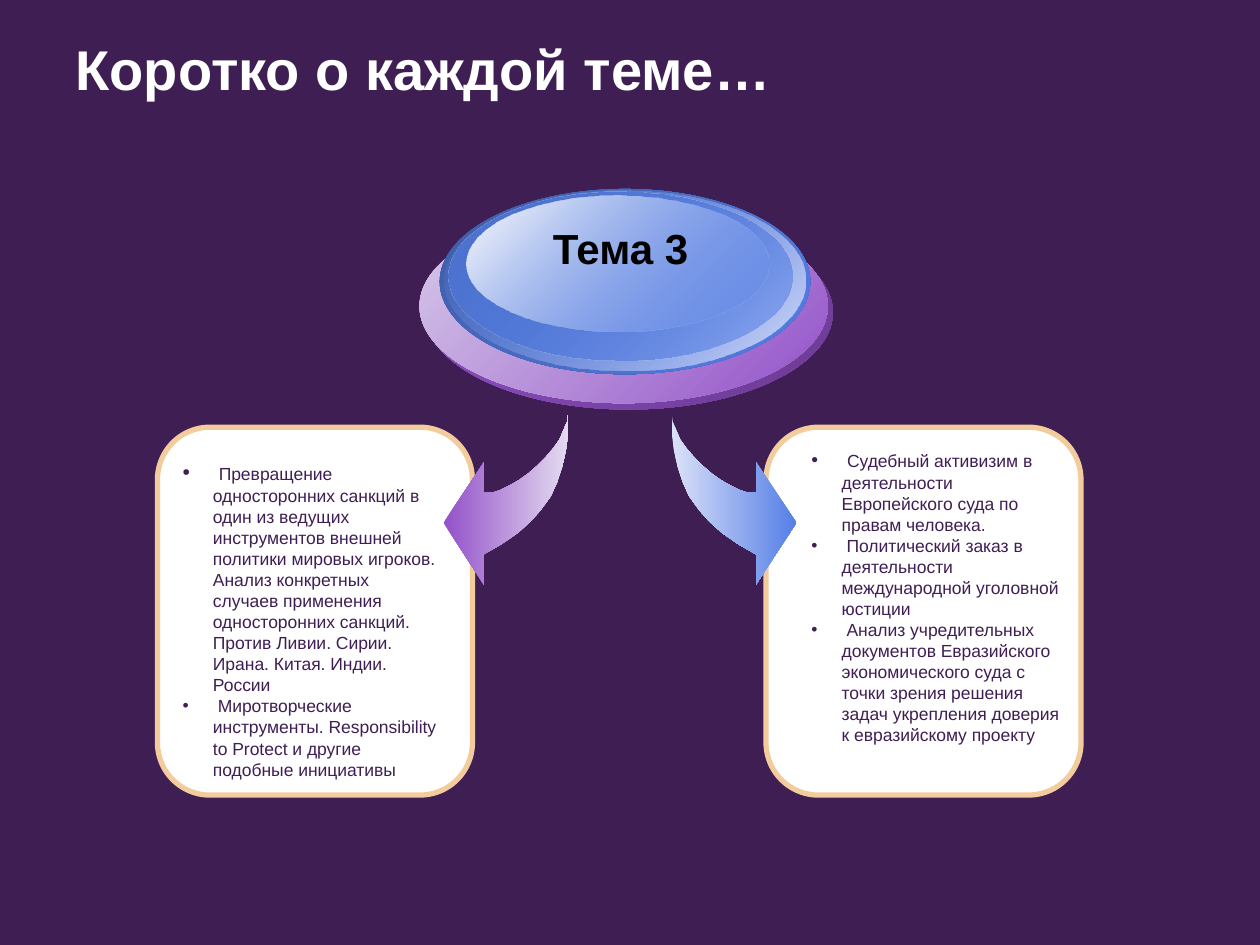
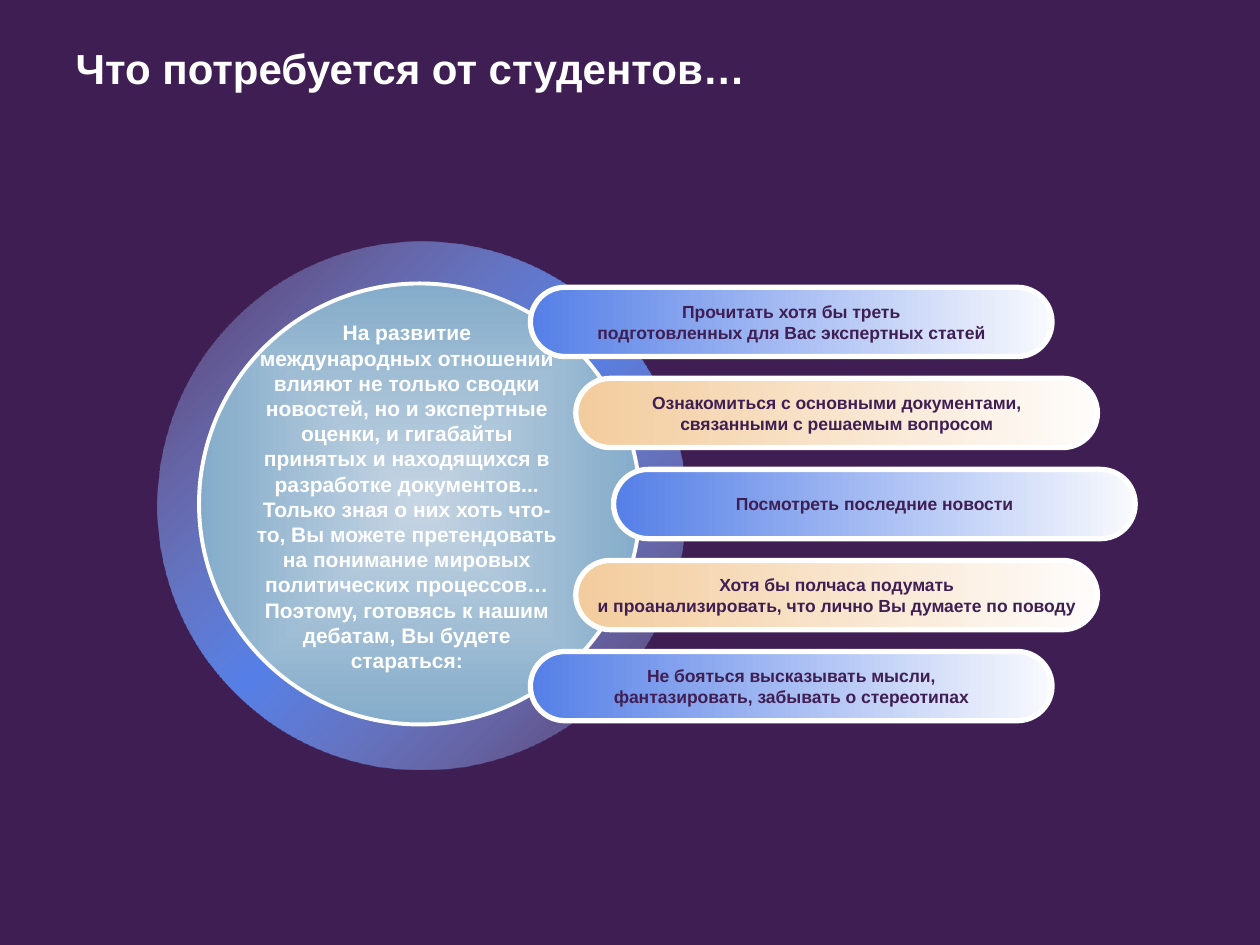
from collections import namedtuple

from pptx import Presentation
from pptx.dml.color import RGBColor
from pptx.enum.shapes import MSO_SHAPE as Kind
from pptx.enum.text import MSO_ANCHOR as Anchor, MSO_AUTO_SIZE as Fit, PP_ALIGN as Align
from pptx.oxml import parse_xml
from pptx.oxml.ns import nsdecls, qn
from pptx.util import Inches, Pt

# The slide is a grid of 100 columns by 75 rows; every length is in cells.
CELL = Inches(0.1)
COLS, ROWS = 100, 75
FONT = "Arial"

PLUM = RGBColor(0x3F, 0x1F, 0x53)
WHITE = RGBColor(0xFF, 0xFF, 0xFF)
BLACK = RGBColor(0x00, 0x00, 0x00)
PEACH = RGBColor(0xF3, 0xCC, 0x9D)
CREAM = RGBColor(0xFE, 0xFC, 0xFB)
BLUE = RGBColor(0x55, 0x7F, 0xE7)
NAVY = RGBColor(0x3D, 0x5B, 0xA5)
COBALT = RGBColor(0x4D, 0x73, 0xD1)
SKY = RGBColor(0xD7, 0xDD, 0xF7)
MIST = RGBColor(0xDB, 0xE1, 0xF8)
HAZE = RGBColor(0xB3, 0xBF, 0xF1)
ICE = RGBColor(0xF9, 0xFA, 0xFE)
VIOLET = RGBColor(0x93, 0x51, 0xC9)
GRAPE = RGBColor(0x6B, 0x3B, 0x93)
LILAC = RGBColor(0xD8, 0xCB, 0xE9)
PEARL = RGBColor(0xE4, 0xDB, 0xF0)
STEEL = RGBColor(0x84, 0xAC, 0xCA)
FROST = RGBColor(0xC6, 0xD5, 0xE3)

Box = namedtuple("Box", "x y w h")

TITLE = Box(5, 2.9, 79.6, 5)

# Arrow outline in tenths of a cell, pointing left.
ARROW = [(99, 0), (99, 15), (97, 30), (94, 43), (90, 55), (85, 66), (77, 77),
         (69, 86), (59, 95), (46, 104), (32, 112), (32, 136), (0, 87),
         (32, 39), (32, 63), (39, 63), (45, 61), (53, 57), (60, 53), (67, 48),
         (74, 42), (81, 35), (87, 28), (92, 21), (95, 14), (98, 7)]
ARROW_W = 99

# Ellipses of the badge, back to front: place in the badge, then gradient stops.
RINGS = [
    (Box(0.4, 2.1, 32.4, 15.4), [(VIOLET, 100), (GRAPE, 100)]),
    (Box(0, 1.6, 32.4, 15.4), [(LILAC, 100), (VIOLET, 100)]),
    (Box(1.6, 0, 29.4, 14.7), [(NAVY, 100), (BLUE, 100)]),
    (Box(2, 0.1, 28.6, 14.3), [(BLUE, 0), (SKY, 100)]),
    (Box(2.3, 0.2, 27.3, 13.4), [(COBALT, 100), (BLUE, 48)]),
    (Box(3.7, 0.5, 24, 10.8), [(WHITE, 100), (BLUE, 38)]),
]

LEFT = [
    "Превращение односторонних санкций в один из ведущих инструментов внешней "
    "политики мировых игроков. Анализ конкретных случаев применения "
    "односторонних санкций. Против Ливии. Сирии. Ирана. Китая. Индии. России",
    "Миротворческие инструменты. Responsibility to Protect и другие подобные "
    "инициативы",
]
RIGHT = [
    "Судебный активизим в деятельности Европейского суда по правам человека.",
    "Политический заказ в деятельности международной уголовной юстиции",
    "Анализ учредительных документов Евразийского экономического суда с точки "
    "зрения решения задач укрепления доверия к евразийскому проекту",
]
INTRO = [
    "На развитие международных отношений влияют не только сводки новостей, но "
    "и экспертные оценки, и гигабайты принятых и находящихся в разработке "
    "документов...",
    "Только зная о них хоть что-то, Вы можете претендовать на понимание "
    "мировых политических процессов…",
    "Поэтому, готовясь к нашим дебатам, Вы будете стараться:",
]
# Shift of each pill to the right, then its lines.
TASKS = [
    (0, ["Прочитать хотя бы треть", "подготовленных для Вас экспертных статей"]),
    (3.6, ["Ознакомиться с основными документами,", "связанными с решаемым вопросом"]),
    (6.6, ["Посмотреть последние новости"]),
    (3.6, ["Хотя бы полчаса подумать",
           "и проанализировать, что лично Вы думаете по поводу"]),
    (0, ["Не бояться высказывать мысли,", "фантазировать, забывать о стереотипах"]),
]


def inner(box, part):
    """Place a part, given from the corner of a box, on the slide."""
    return Box(box.x + part.x, box.y + part.y, part.w, part.h)


def emu(box):
    return [round(n * CELL) for n in box]


def move(shape, box):
    shape.left, shape.top, shape.width, shape.height = emu(box)


def blend(shape, stops, angle=0, radial=False):
    """Fill with evenly spaced (colour, opacity) stops."""
    last = len(stops) - 1
    marks = "".join(
        f'<a:gs pos="{100000 * i // last}"><a:srgbClr val="{hue}">'
        f'<a:alpha val="{alpha * 1000}"/></a:srgbClr></a:gs>'
        for i, (hue, alpha) in enumerate(stops))
    if radial:
        sweep = ('<a:path path="shape"><a:fillToRect l="50000" t="50000" '
                 'r="50000" b="50000"/></a:path>')
    else:
        sweep = f'<a:lin ang="{angle * 60000}" scaled="0"/>'
    shape.fill.background()
    props = shape._element.spPr
    props.replace(props.find(qn("a:noFill")), parse_xml(
        f'<a:gradFill {nsdecls("a")} rotWithShape="1"><a:gsLst>{marks}</a:gsLst>'
        f'{sweep}</a:gradFill>'))


def edge(shape, hue=None, width=0):
    shape.shadow.inherit = False
    if hue is None:
        shape.line.fill.background()
    else:
        shape.line.color.rgb = hue
        shape.line.width = Pt(width)


def draw(slide, kind, box, hue=None, width=0):
    shape = slide.shapes.add_shape(kind, *emu(box))
    edge(shape, hue, width)
    return shape


def style(font, size, hue, bold=False):
    font.name, font.size, font.bold = FONT, Pt(size), bold
    font.color.rgb = hue


def write(shape, lines, size, hue, wrap=False):
    """Set bold, centred paragraphs."""
    frame = shape.text_frame
    frame.text = "\n".join(lines)
    frame.word_wrap = wrap
    for para in frame.paragraphs:
        para.alignment = Align.CENTER
        for run in para.runs:
            style(run.font, size, hue, True)


def label(slide, box, lines, size, hue, wrap=False):
    shape = slide.shapes.add_textbox(*emu(box))
    write(shape, lines, size, hue, wrap)
    shape.text_frame.auto_size = Fit.SHAPE_TO_FIT_TEXT


def head(slide, text, size):
    title = slide.shapes.title
    move(title, TITLE)
    frame = title.text_frame
    frame.text = text
    frame.auto_size = Fit.NONE
    frame.vertical_anchor = Anchor.MIDDLE
    para = frame.paragraphs[0]
    para.alignment = Align.LEFT
    style(para.runs[0].font, size, WHITE, True)


def fill_list(holder, box, items, lead):
    """Write a bulleted list whose first bullet has the size lead."""
    move(holder, box)
    frame = holder.text_frame
    frame.text = "\n".join(" " + item for item in items)
    frame.auto_size = Fit.SHAPE_TO_FIT_TEXT
    for i, para in enumerate(frame.paragraphs):
        props = para._p.get_or_add_pPr()
        props.set("marL", str(Inches(0.24)))
        props.set("indent", str(-Inches(0.24)))
        para.space_before = Pt(0)
        para.runs[0].text = " "
        para.add_run().text = items[i]
        for run, size in zip(para.runs, (10 if i else lead, 10)):
            style(run.font, size, PLUM)


def card(slide, box, holder, part, items, lead):
    shape = draw(slide, Kind.ROUNDED_RECTANGLE, box, PEACH, 3)
    shape.fill.solid()
    shape.fill.fore_color.rgb = WHITE
    fill_list(holder, inner(box, part), items, lead)
    slide.shapes._spTree.append(holder._element)


def arrow(slide, box, stops, flip=False):
    dots = [(ARROW_W - x if flip else x, y) for x, y in ARROW]
    pen = slide.shapes.build_freeform(*dots[0], scale=CELL / 10)
    pen.add_line_segments(dots[1:], close=True)
    shape = pen.convert_to_shape(*emu(box)[:2])
    blend(shape, stops)
    edge(shape)


def badge(slide, box, text):
    for part, stops in RINGS:
        blend(draw(slide, Kind.OVAL, inner(box, part)), stops, 45)
    label(slide, inner(box, Box(9.5, 2.2, 12.9, 5)), [text], 24, BLACK)


def disc(slide, box, lines):
    ring = draw(slide, Kind.DONUT, box)
    ring.adjustments[0] = 0.09
    blend(ring, [(HAZE, 12), (BLUE, 100), (HAZE, 12)], 45)
    core = draw(slide, Kind.OVAL, inner(box, Box(3.3, 3.3, 35, 35)), WHITE, 2.25)
    blend(core, [(FROST, 100), (STEEL, 100)], radial=True)
    return inner(box, Box(6.8, 5.7, 26, 29.3))


def pills(slide, box, tasks):
    high = 5.5
    step = (box.h - high) / (len(tasks) - 1)
    for i, (shift, lines) in enumerate(tasks):
        place = inner(box, Box(shift, i * step, 41.4, high))
        pill = draw(slide, Kind.ROUNDED_RECTANGLE, place, WHITE, 3)
        pill.adjustments[0] = 0.5
        ends = (PEACH, CREAM) if i % 2 else (BLUE, ICE)
        blend(pill, [(hue, 100) for hue in ends])
        write(pill, lines, 10, PLUM)
        pill.text_frame.vertical_anchor = Anchor.MIDDLE


def topic(deck):
    slide = deck.slides.add_slide(deck.slide_layouts.get_by_name("Two Content"))
    head(slide, "Коротко о каждой теме…", 32)
    first, second = list(slide.placeholders)[1:]
    card(slide, Box(60.8, 33.9, 25, 29.2), second, Box(2.6, 1.2, 22.3, 21.4), RIGHT, 11)
    card(slide, Box(12.5, 33.9, 25, 29.2), first, Box(1, 2.1, 22.3, 23.2), LEFT, 12)
    arrow(slide, Box(35.2, 32.8, 9.9, 13.6), [(VIOLET, 100), (PEARL, 100)])
    arrow(slide, Box(53.3, 32.8, 9.9, 13.6), [(MIST, 100), (BLUE, 100)], flip=True)
    badge(slide, Box(33.3, 15, 32.8, 17.5), "Тема 3")


def duties(deck):
    slide = deck.slides.add_slide(deck.slide_layouts.get_by_name("Title Only"))
    head(slide, "Что потребуется от студентов…", 24)
    room = disc(slide, Box(12.5, 19.2, 41.9, 41.9), INTRO)
    pills(slide, Box(42.1, 22.8, 48, 34.4), TASKS)
    label(slide, room, INTRO, 12, WHITE, wrap=True)


def main():
    deck = Presentation()
    deck.slide_width, deck.slide_height = COLS * CELL, ROWS * CELL
    ground = deck.slide_master.background.fill
    ground.solid()
    ground.fore_color.rgb = PLUM
    topic(deck)
    duties(deck)
    deck.save("out.pptx")


if __name__ == "__main__":
    main()
